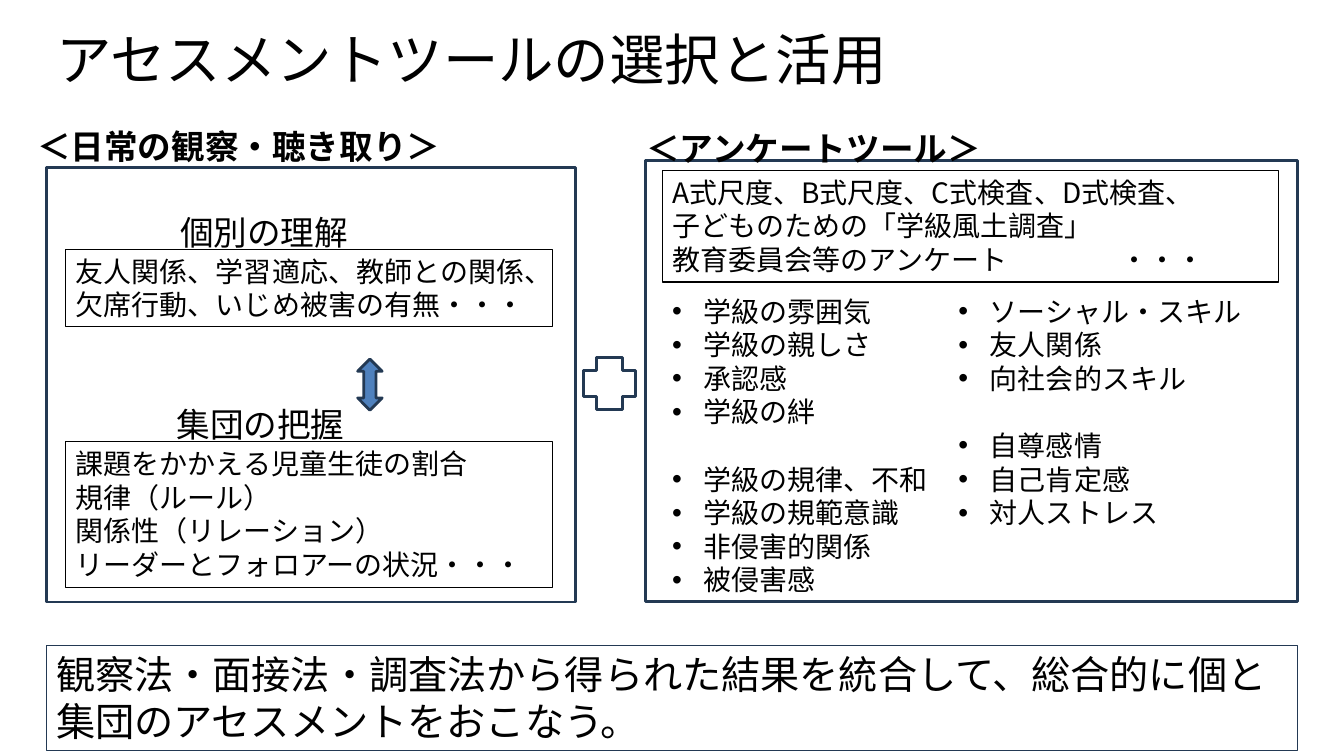
from pptx import Presentation
from pptx.dml import color
from pptx.enum import shapes, text
from pptx.oxml import ns
from pptx.util import Pt
from lxml import etree

theme = {
    "ink": color.RGBColor(0x00, 0x00, 0x00),
    "navy": color.RGBColor(0x23, 0x39, 0x53),
    "blue": color.RGBColor(0x4F, 0x81, 0xBD),
    "sans": "Noto Sans CJK JP",
    "latin": "Roboto",
    "title": 39.6,
    "summary": 28,
    "heading": 24,
    "body": 20,
}
LIST_INDENT = 22.5
LIST_GAP = 24
ELLIPSIS_TAB = 320

presentation = Presentation()
presentation.slide_width = Pt(960)
presentation.slide_height = Pt(540)
slide = presentation.slides.add_slide(presentation.slide_layouts[6])


def add_outline(kind, box, line, width, fill=None):
    shape = slide.shapes.add_shape(kind, *[Pt(length) for length in box])
    shape.shadow.inherit = False
    if fill is None:
        shape.fill.background()
    else:
        shape.fill.solid()
        shape.fill.fore_color.rgb = theme[fill]
    shape.line.color.rgb = theme[line]
    shape.line.width = Pt(width)
    return shape


def write(shape, groups, size="body", face="sans", bold=False, bullets=False):
    frame = shape.text_frame
    frame.word_wrap = True
    frame.auto_size = text.MSO_AUTO_SIZE.SHAPE_TO_FIT_TEXT
    frame.vertical_anchor = text.MSO_ANCHOR.TOP
    lines = [(line, g > 0 and i == 0) for g, group in enumerate(groups) for i, line in enumerate(group)]
    for number, (line, starts_group) in enumerate(lines):
        paragraph = frame.add_paragraph() if number else frame.paragraphs[0]
        paragraph.alignment = text.PP_ALIGN.LEFT
        if starts_group:
            paragraph.space_before = Pt(LIST_GAP)
        properties = paragraph._p.get_or_add_pPr()
        if bullets:
            properties.set("marL", str(Pt(LIST_INDENT)))
            properties.set("indent", str(-Pt(LIST_INDENT)))
            etree.SubElement(properties, ns.qn("a:buFont")).set("typeface", "Arial")
            etree.SubElement(properties, ns.qn("a:buChar")).set("char", "•")
        if "\t" in line:
            tabs = etree.SubElement(properties, ns.qn("a:tabLst"))
            etree.SubElement(tabs, ns.qn("a:tab"), pos=str(Pt(ELLIPSIS_TAB)), algn="l")
        run = paragraph.add_run()
        run.text = line
        run.font.size = Pt(theme[size])
        run.font.name = theme[face]
        run.font.bold = bold
        run.font.color.rgb = theme["ink"]
        east_asian = etree.Element(ns.qn("a:ea"), typeface=theme[face])
        run._r.rPr.find(ns.qn("a:latin")).addnext(east_asian)


title = slide.shapes.add_textbox(Pt(33), Pt(18.5), Pt(656.5), Pt(46))
write(title, [["アセスメントツールの選択と活用"]], "title")
title.text_frame.auto_size = text.MSO_AUTO_SIZE.NONE
title.text_frame.vertical_anchor = text.MSO_ANCHOR.MIDDLE

panels = [(33, 119.5, 378, 310.5), (461, 114.5, 466, 315)]
for panel in panels:
    add_outline(shapes.MSO_SHAPE.RECTANGLE, panel, "navy", 2)

add_outline(shapes.MSO_SHAPE.CROSS, (417, 255.5, 37, 37), "navy", 2)
add_outline(shapes.MSO_SHAPE.UP_DOWN_ARROW, (255.5, 256.5, 17.5, 36.5), "navy", 2, "blue")

boxes = [
    ((473, 121.5, 440, 80), [
        "A式尺度、B式尺度、C式検査、D式検査、",
        "子どものための「学級風土調査」",
        "教育委員会等のアンケート\t・・・",
    ]),
    ((47, 178, 348, 55.5), ["友人関係、学習適応、教師との関係、欠席行動、いじめ被害の有無・・・"]),
    ((47, 315.5, 348, 104.5), [
        "課題をかかえる児童生徒の割合",
        "規律（ルール）",
        "関係性（リレーション）",
        "リーダーとフォロアーの状況・・・",
    ]),
]
for box, lines in boxes:
    write(add_outline(shapes.MSO_SHAPE.RECTANGLE, box, "ink", 0.75), [lines])

lists = [
    ((473, 206.5, 204.5, 225), [
        ["学級の雰囲気", "学級の親しさ", "承認感", "学級の絆"],
        ["学級の規律、不和", "学級の規範意識", "非侵害的関係", "被侵害感"],
    ]),
    ((677.5, 206.5, 249, 177), [
        ["ソーシャル・スキル", "友人関係", "向社会的スキル"],
        ["自尊感情", "自己肯定感", "対人ストレス"],
    ]),
]
for box, groups in lists:
    write(slide.shapes.add_textbox(*[Pt(length) for length in box]), groups, bullets=True)

headings = [
    ((19.5, 86.5, 382, 36), "＜日常の観察・聴き取り＞", "sans", True),
    ((454.5, 88, 320, 36), "＜アンケートツール＞", "sans", True),
    ((121.5, 147.5, 211.5, 36), "個別の理解", "sans", False),
    ((119, 285, 178, 36), "集団の把握", "latin", False),
]
for box, heading, face, bold in headings:
    write(slide.shapes.add_textbox(*[Pt(length) for length in box]), [[heading]], "heading", face, bold)

summary = add_outline(shapes.MSO_SHAPE.RECTANGLE, (33, 461, 893.5, 75), "navy", 0.75)
write(summary, [["観察法・面接法・調査法から得られた結果を統合して、総合的に個と集団のアセスメントをおこなう。"]],
      "summary", "latin")

presentation.save("out.pptx")
